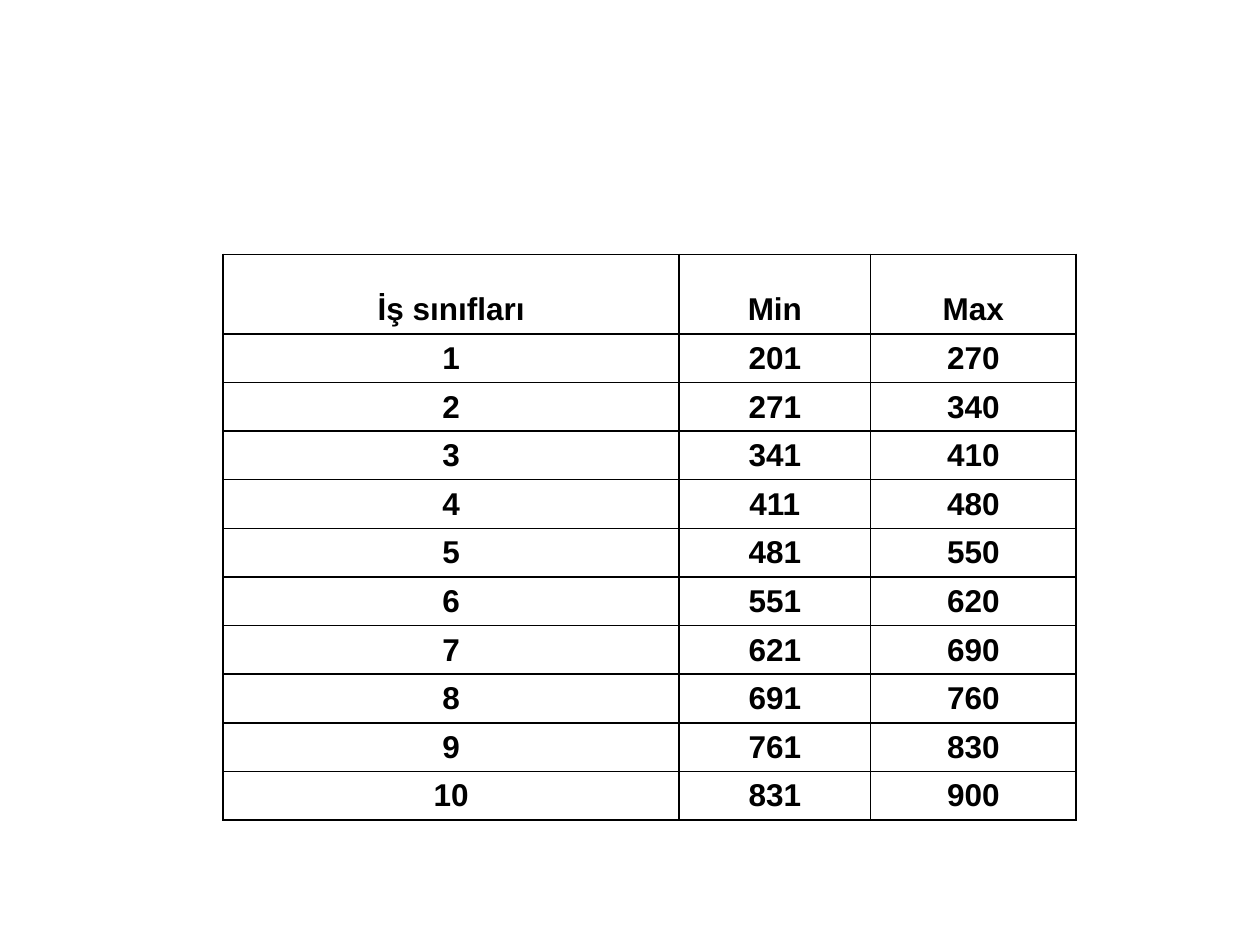
import pptx
import pptx.dml.color
import pptx.enum.text
import pptx.oxml
import pptx.oxml.ns
import pptx.util
from pptx.util import Cm

BLACK = pptx.dml.color.RGBColor(0, 0, 0)
FONT_NAME = "Arial"
FONT_SIZE = pptx.util.Pt(18)
BORDER_WIDTH = pptx.util.Pt(1)

HEADINGS = ("İş sınıfları", "Min", "Max")
COLUMN_WIDTHS = (Cm(9.19), Cm(3.86), Cm(4.14))
HEADER_HEIGHT = Cm(1.6)
ROW_HEIGHT = Cm(0.98)
CLASS_COUNT = 10
FIRST_MINIMUM = 201
CLASS_SPAN = 70


def job_class_rows():
    """Return the headings and the consecutive, equally wide point ranges."""
    rows = [HEADINGS]
    for index in range(CLASS_COUNT):
        minimum = FIRST_MINIMUM + index * CLASS_SPAN
        rows.append((index + 1, minimum, minimum + CLASS_SPAN - 1))
    return rows


def add_borders(cell):
    """Draw a solid line on all four sides; lines must precede the fill."""
    properties = cell._tc.get_or_add_tcPr()
    for position, side in enumerate(("lnL", "lnR", "lnT", "lnB")):
        line = pptx.oxml.parse_xml(
            f'<a:{side} {pptx.oxml.ns.nsdecls("a")} w="{BORDER_WIDTH}">'
            f'<a:solidFill><a:srgbClr val="{BLACK}"/></a:solidFill></a:{side}>'
        )
        properties.insert(position, line)


def fill_cell(cell, value):
    cell.fill.background()
    cell.vertical_anchor = pptx.enum.text.MSO_ANCHOR.BOTTOM
    cell.text_frame.text = str(value)
    paragraph = cell.text_frame.paragraphs[0]
    paragraph.alignment = pptx.enum.text.PP_ALIGN.CENTER
    font = paragraph.runs[0].font
    font.name = FONT_NAME
    font.size = FONT_SIZE
    font.bold = True
    font.color.rgb = BLACK
    add_borders(cell)


def add_class_table(slide, rows, left, top):
    height = HEADER_HEIGHT + ROW_HEIGHT * (len(rows) - 1)
    shape = slide.shapes.add_table(
        len(rows), len(HEADINGS), left, top, sum(COLUMN_WIDTHS), height
    )
    table = shape.table
    table.first_row = False
    table.horz_banding = False
    for column, width in zip(table.columns, COLUMN_WIDTHS):
        column.width = width
    for index, (row, values) in enumerate(zip(table.rows, rows)):
        row.height = ROW_HEIGHT if index else HEADER_HEIGHT
        for cell, value in zip(row.cells, values):
            fill_cell(cell, value)


def main():
    presentation = pptx.Presentation()
    presentation.slide_width = Cm(25.4)
    presentation.slide_height = Cm(19.05)
    slide = presentation.slides.add_slide(presentation.slide_layouts[6])
    add_class_table(slide, job_class_rows(), Cm(4.5), Cm(5.13))
    presentation.save("out.pptx")


if __name__ == "__main__":
    main()
